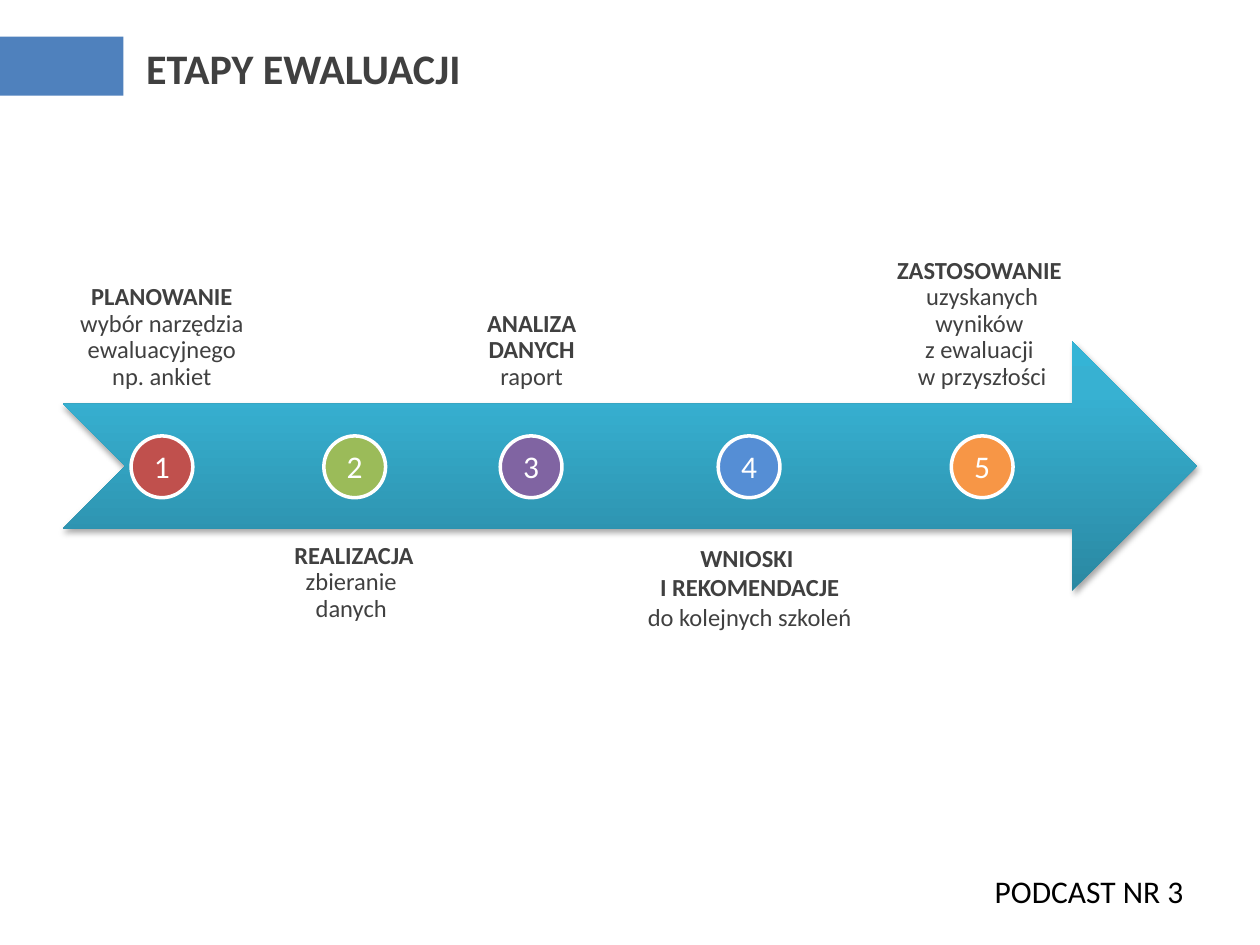
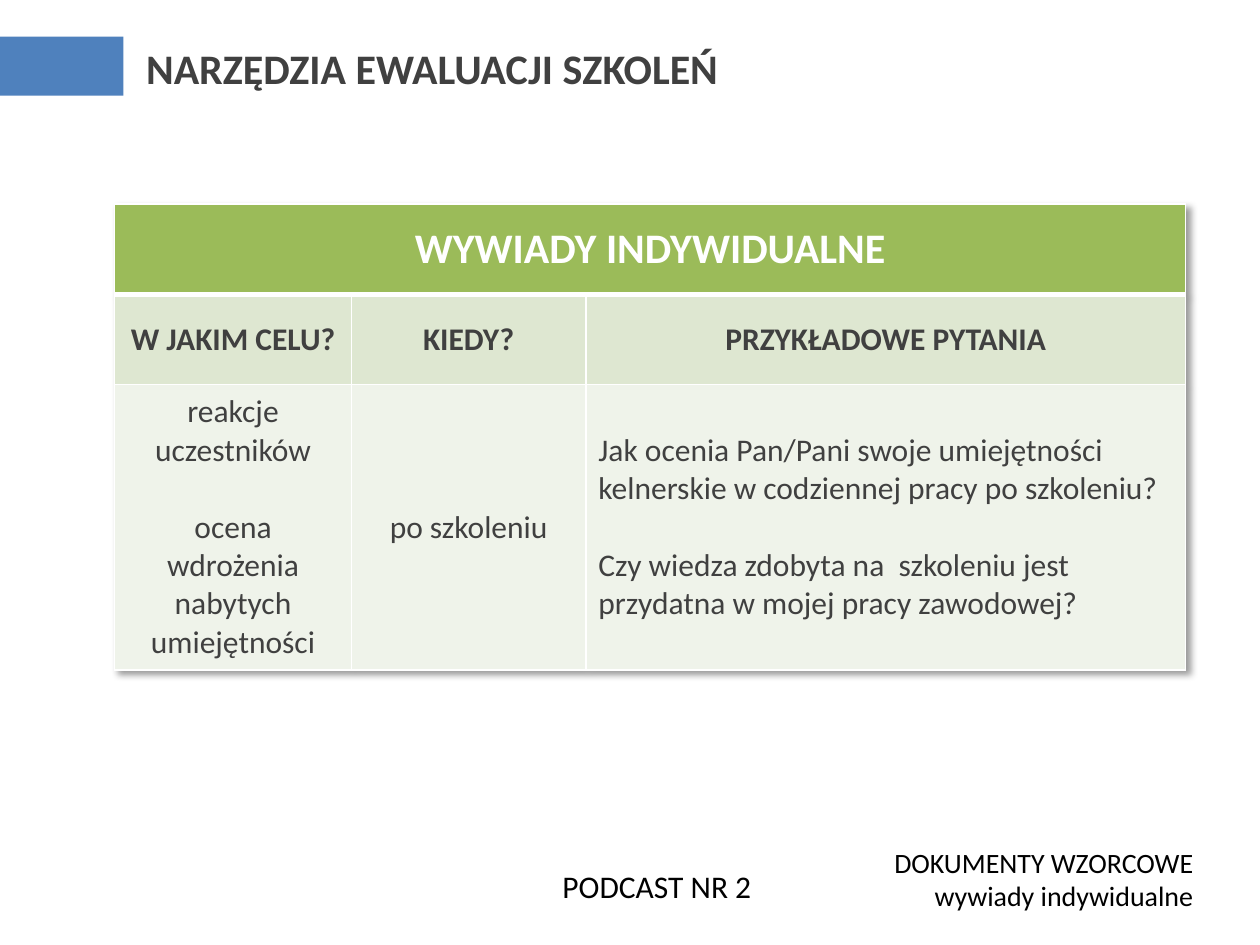
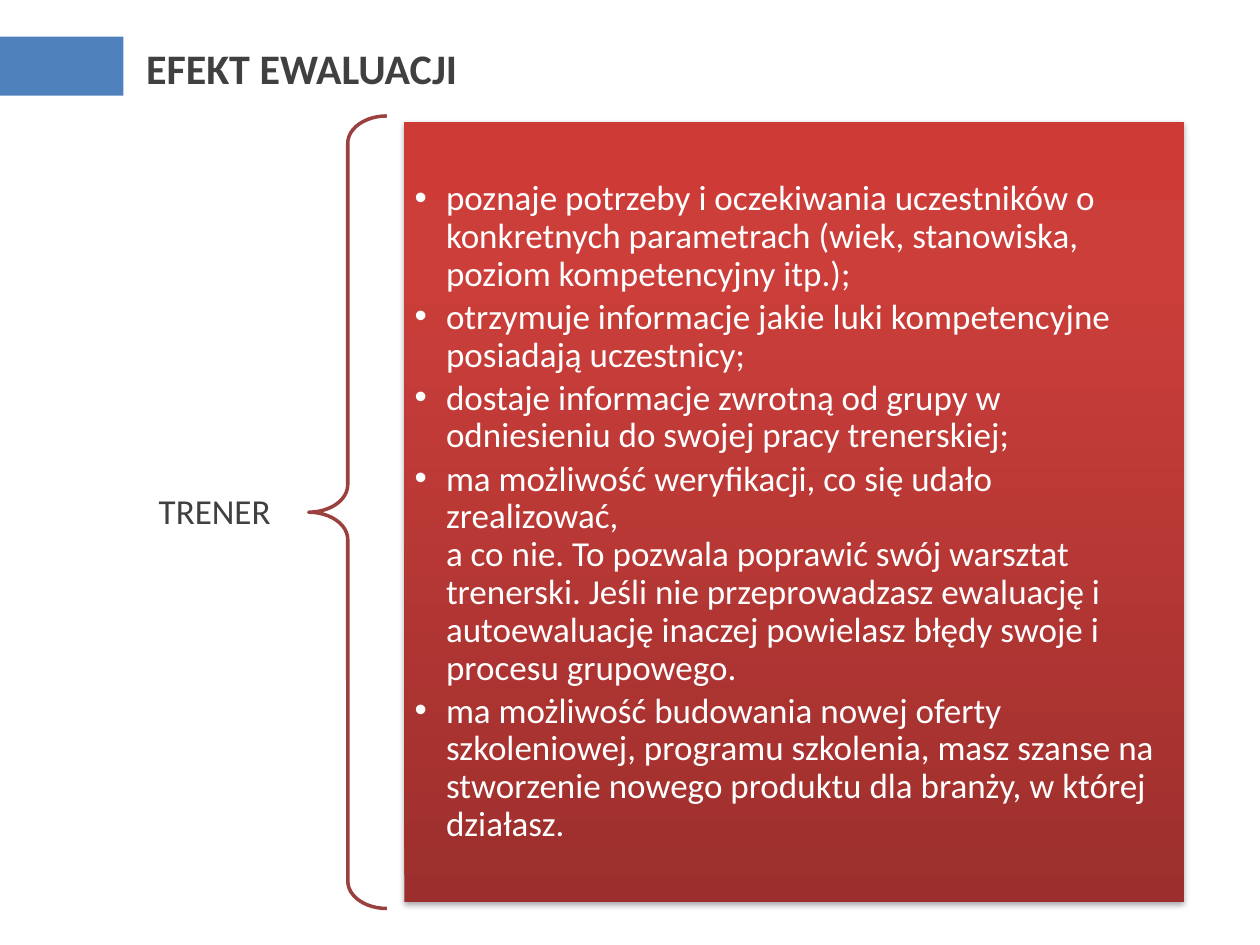
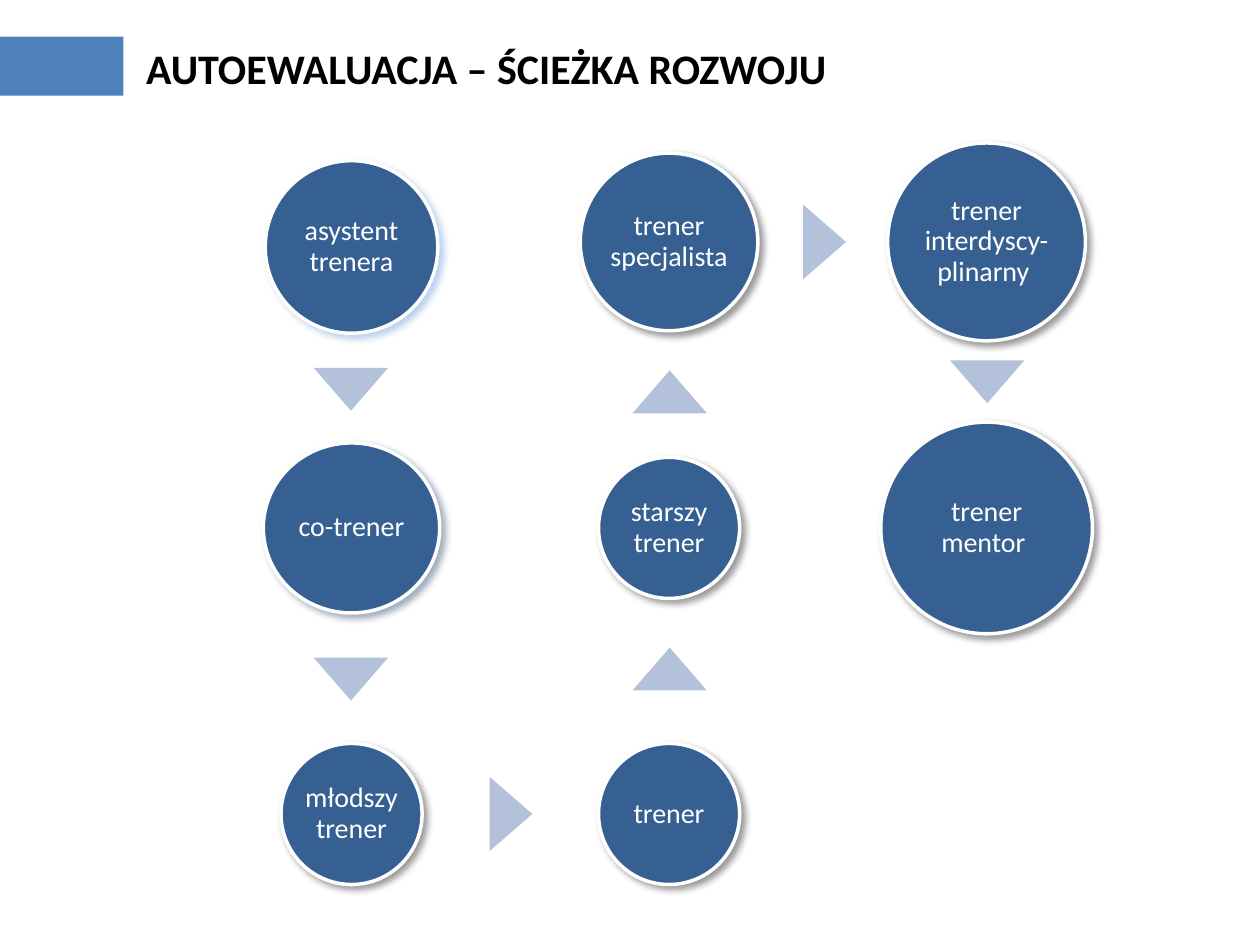
from copy import deepcopy

from lxml.etree import SubElement
from pptx import Presentation
from pptx.dml.color import RGBColor
from pptx.enum.shapes import MSO_SHAPE
from pptx.enum.text import MSO_ANCHOR, MSO_AUTO_SIZE, PP_ALIGN
from pptx.oxml import parse_xml
from pptx.oxml.ns import qn
from pptx.util import Inches, Pt

FONT = "Calibri"
DARK, WHITE, BLACK = "404040", "FFFFFF", "000000"
BLUE, NAVY, PALE_BLUE = "4F81BD", "376092", "B3C1DB"
GREEN, LIGHT_GREEN, PALE_GREEN = "9BBB59", "DEE7D1", "EFF3EA"
TEAL_GRADIENT = [(0, "2A88A2"), (0.8, "37B1D2"), (1, "34B4D6")]
RED_GRADIENT = [(0, "9C2F2D"), (0.8, "CB3E3A"), (1, "CE3B37")]

# Shadow values: colour, opacity in percent, blur and distance in points, angle
SOFT_SHADOW = (BLACK, 35, 3.1, 1.8, 90)
CORNER_SHADOW = (BLACK, 40, 4, 3, 45)
SHADOW_XML = (
    '<a:effectLst xmlns:a="http://schemas.openxmlformats.org/drawingml/2006/main">'
    '<a:outerShdw blurRad="{2:.0f}" dist="{3:.0f}" dir="{4}" algn="tl" rotWithShape="0">'
    '<a:srgbClr val="{0}"><a:alpha val="{1}"/></a:srgbClr></a:outerShdw></a:effectLst>'
)
MARGINS = ("margin_left", "margin_right", "margin_top", "margin_bottom")
FIT = {"word_wrap": False, "auto_size": MSO_AUTO_SIZE.SHAPE_TO_FIT_TEXT}
MIDDLE = {"word_wrap": True, "vertical_anchor": MSO_ANCHOR.MIDDLE}


def add_figure(slide, kind, box, fill=None, line=None, shadow=None):
    """Add a preset shape; fill is a hex colour or a list of gradient stops."""
    figure = slide.shapes.add_shape(kind, *map(Inches, box))
    if fill is None:
        figure.fill.background()
    elif isinstance(fill, str):
        figure.fill.solid()
        figure.fill.fore_color.rgb = RGBColor.from_string(fill)
    else:
        figure.fill.gradient()
        figure.fill.gradient_angle = 90
        stop_list = figure.element.spPr.find(qn("a:gradFill")).find(qn("a:gsLst"))
        stop_list.append(deepcopy(stop_list[-1]))
        for stop, (position, color) in zip(figure.fill.gradient_stops, fill):
            stop.position = position
            stop.color.rgb = RGBColor.from_string(color)
    if line:
        figure.line.color.rgb = RGBColor.from_string(line)
        figure.line.width = Pt(2)
    else:
        figure.line.fill.background()
    figure.shadow.inherit = False
    if shadow:
        color, opacity, blur, distance, angle = shadow
        effects = figure.element.spPr.find(qn("a:effectLst"))
        effects.getparent().replace(effects, parse_xml(SHADOW_XML.format(
            color, opacity * 1000, Pt(blur), Pt(distance), angle * 60000)))
    return figure


def write(frame, paragraphs, size, color=DARK, align=PP_ALIGN.LEFT, spacing=1.0,
          gap=0, inset=None, **frame_format):
    """Fill a text frame; each paragraph is a pair of bold and plain text."""
    if inset is not None:
        frame_format = {**dict.fromkeys(MARGINS, Inches(inset)), **frame_format}
    for name, value in frame_format.items():
        setattr(frame, name, value)
    for index, parts in enumerate(paragraphs):
        paragraph = frame.add_paragraph() if index else frame.paragraphs[0]
        paragraph.alignment = align
        paragraph.line_spacing = spacing
        paragraph.space_before = Pt(gap if index else 0)
        for part, bold in zip(parts, (True, False)):
            for row, text in enumerate(part.split("\n")):
                if row:
                    paragraph.add_line_break()
                if text:
                    run = paragraph.add_run()
                    run.text = text
                    run.font.name = FONT
                    run.font.size = Pt(size)
                    run.font.bold = bold
                    run.font.color.rgb = RGBColor.from_string(color)
        for line_break in paragraph._p.findall(qn("a:br")):
            SubElement(line_break, qn("a:rPr"), sz=str(size * 100))


prs = Presentation()
prs.slide_width, prs.slide_height = Inches(10), Inches(7.5)
TITLE_AND_BODY, TITLE_ONLY = prs.slide_layouts[1], prs.slide_layouts[5]

slides = []
for layout, title, width, color in [
    (TITLE_ONLY, "ETAPY EWALUACJI", 2.72, DARK),
    (TITLE_ONLY, "NARZĘDZIA EWALUACJI SZKOLEŃ", 4.78, DARK),
    (TITLE_AND_BODY, "EFEKT EWALUACJI", 2.7, DARK),
    (TITLE_ONLY, "AUTOEWALUACJA – ŚCIEŻKA ROZWOJU", 5.73, BLACK),
]:
    slide = prs.slides.add_slide(layout)
    heading = slide.shapes.title
    heading.left, heading.top = Inches(1.06), Inches(0.29)
    heading.width, heading.height = Inches(width), Inches(0.5)
    write(heading.text_frame, [(title, "")], 24, color,
          vertical_anchor=MSO_ANCHOR.TOP, **FIT)
    slides.append(slide)
stages_slide, tools_slide, effect_slide, path_slide = slides

# The blue band belongs to the master, so every slide shows it
band = add_figure(stages_slide, MSO_SHAPE.RECTANGLE, (0, 0.29, 0.98, 0.47), BLUE)
prs.slide_master.shapes.element.insert(2, band.element)

# Footers
for slide, box, lines, size, align in [
    (stages_slide, (7.74, 6.87, 1.77, 0.4), [" PODCAST NR 3"], 18, PP_ALIGN.LEFT),
    (tools_slide, (4.31, 6.83, 1.77, 0.4), [" PODCAST NR 2"], 18, PP_ALIGN.LEFT),
    (tools_slide, (6.96, 6.66, 2.61, 0.64),
     ["DOKUMENTY WZORCOWE", "wywiady indywidualne"], 16, PP_ALIGN.RIGHT),
]:
    footer = slide.shapes.add_textbox(*map(Inches, box))
    write(footer.text_frame, [("", line) for line in lines], size, BLACK, align, **FIT)

# Slide 1: five stages on an arrow, labels above and below in turn
add_figure(stages_slide, MSO_SHAPE.NOTCHED_RIGHT_ARROW, (0.5, 2.71, 9, 1.98),
           TEAL_GRADIENT, shadow=SOFT_SHADOW)
stages = [
    (1.04, 0.5, 1.57, "C0504D", 0.9,
     [("PLANOWANIE", " wybór narzędzia ewaluacyjnego np. ankiet")]),
    (2.57, 2.14, 1.34, "9BBB59", 0.9, [("REALIZACJA ", "zbieranie  danych ")]),
    (3.97, 3.55, 1.34, "8064A2", 0.9, [("ANALIZA DANYCH", " raport")]),
    (5.7, 4.96, 1.98, "558ED5", 1.0,
     [("WNIOSKI \nI REKOMENDACJE", ""), ("", "do kolejnych szkoleń")]),
    (7.55, 7, 1.59, "F79646", 0.9,
     [("ZASTOSOWANIE \n", "uzyskanych wyników \nz ewaluacji \nw przyszłości")]),
]
for number, (marker_left, left, width, color, spacing, label) in enumerate(stages, 1):
    above = number % 2 == 1
    caption = stages_slide.shapes.add_textbox(
        Inches(left), Inches(1.23 if above else 4.2), Inches(width), Inches(1.98))
    write(caption.text_frame, label, 14, align=PP_ALIGN.CENTER, spacing=spacing,
          inset=0.11, word_wrap=True,
          vertical_anchor=MSO_ANCHOR.BOTTOM if above else MSO_ANCHOR.TOP)
    marker = add_figure(stages_slide, MSO_SHAPE.OVAL,
                        (marker_left, 3.46, 0.49, 0.49), color, WHITE)
    write(marker.text_frame, [("", str(number))], 18, WHITE, PP_ALIGN.CENTER,
          inset=0, margin_bottom=Inches(0.02), **MIDDLE)

# Slide 2: table of individual interviews
interviews = tools_slide.shapes.add_table(
    3, 3, Inches(0.91), Inches(1.62), Inches(8.5), Inches(3.7)).table
for column, width in zip(interviews.columns, (1.88, 1.86, 4.76)):
    column.width = Inches(width)
for row, height in zip(interviews.rows, (0.72, 0.71, 2.27)):
    row.height = Inches(height)
interviews.cell(0, 0).merge(interviews.cell(0, 2))

rows = [
    (GREEN, WHITE, 24, [[("WYWIADY INDYWIDUALNE", "")], [], []]),
    (LIGHT_GREEN, DARK, 18,
     [[("W JAKIM CELU?", "")], [("KIEDY?", "")], [("PRZYKŁADOWE PYTANIA", "")]]),
    (PALE_GREEN, DARK, 18, [
        [("", "reakcje uczestników"), ("", "ocena wdrożenia nabytych umiejętności")],
        [("", "po szkoleniu")],
        [("", "Jak ocenia Pan/Pani swoje umiejętności kelnerskie "
              "w codziennej pracy po szkoleniu?"),
         ("", "Czy wiedza zdobyta na  szkoleniu jest przydatna "
              "w mojej pracy zawodowej?")],
    ]),
]
for r, (fill, color, size, contents) in enumerate(rows):
    for c, paragraphs in enumerate(contents):
        cell = interviews.cell(r, c)
        cell.fill.solid()
        cell.fill.fore_color.rgb = RGBColor.from_string(fill)
        cell.vertical_anchor = MSO_ANCHOR.MIDDLE
        align = PP_ALIGN.LEFT if (r, c) == (2, 2) else PP_ALIGN.CENTER
        write(cell.text_frame, paragraphs, size, color, align, gap=22)
        properties = cell._tc.get_or_add_tcPr()
        for position, side in enumerate("LRTB"):
            weight = 3 if (r, side) in ((0, "B"), (1, "T")) else 1
            border = SubElement(properties, qn(f"a:ln{side}"), w=str(Pt(weight)))
            SubElement(SubElement(border, qn("a:solidFill")), qn("a:srgbClr"), val=WHITE)
            properties.insert(position, border)
color, opacity, blur, distance, angle = CORNER_SHADOW
interviews._tbl.tblPr.insert(0, parse_xml(SHADOW_XML.format(
    color, opacity * 1000, Pt(blur), Pt(distance), angle * 60000)))

# Slide 3: what the trainer gains
trainer = effect_slide.shapes.add_textbox(*map(Inches, (1.1, 3.86, 1.38, 0.42)))
write(trainer.text_frame, [("", "TRENER")], 20, spacing=0.9,
      inset=0.06, margin_left=Inches(0.16), margin_right=Inches(0.16), **MIDDLE)
brace = add_figure(effect_slide, MSO_SHAPE.LEFT_BRACE, (2.45, 0.92, 0.62, 6.29),
                   line="9A403E")
brace.adjustments[0], brace.adjustments[1] = 0.35, 0.5
panel = add_figure(effect_slide, MSO_SHAPE.RECTANGLE, (3.21, 0.97, 6.19, 6.19),
                   RED_GRADIENT, shadow=SOFT_SHADOW)

gains = [
    "poznaje potrzeby i oczekiwania uczestników o konkretnych parametrach "
    "(wiek, stanowiska, poziom kompetencyjny itp.);",
    "otrzymuje informacje jakie luki kompetencyjne posiadają uczestnicy;",
    "dostaje informacje zwrotną od grupy w odniesieniu do swojej pracy trenerskiej;",
    "ma możliwość weryfikacji, co się udało  zrealizować, \n"
    "a co nie. To pozwala poprawić swój warsztat trenerski. Jeśli nie przeprowadzasz "
    "ewaluację i autoewaluację inaczej powielasz błędy swoje i procesu grupowego.",
    "ma możliwość budowania nowej oferty szkoleniowej, programu szkolenia, masz szanse "
    "na stworzenie nowego produktu dla branży, w której działasz.",
]
gain_list = effect_slide.placeholders[1]
for side in ("left", "top", "width", "height"):
    setattr(gain_list, side, getattr(panel, side))
write(gain_list.text_frame, [("", gain) for gain in gains], 20, WHITE, spacing=0.9,
      gap=3, inset=0.08, margin_right=Inches(0.15),
      auto_size=MSO_AUTO_SIZE.NONE, **MIDDLE)
for paragraph in gain_list.text_frame.paragraphs:
    properties = paragraph._p.get_or_add_pPr()
    properties.set("marL", str(Inches(0.25)))
    properties.set("indent", str(Inches(-0.25)))
    SubElement(properties, qn("a:buChar"), char="•")
effect_slide.shapes.element.append(gain_list.element)  # in front of the panel

# Slide 4: development path, down, up and down again over three columns
FIRST_COLUMN, COLUMN_STEP = 2.79, 2.52
roles = [
    (0, 1.96, 1.37, 1.37, "558ED5", "asystent trenera"),
    (0, 4.19, 1.4, 1.35, "17375E", "co-trener"),
    (0, 6.46, 1.12, 1.12, BLACK, "młodszy trener"),
    (1, 6.46, 1.12, 1.12, BLACK, "trener"),
    (1, 4.19, 1.12, 1.12, BLACK, "starszy trener"),
    (1, 1.92, 1.41, 1.41, BLACK, "trener specjalista "),
    (2, 1.92, 1.57, 1.57, BLACK, "trener interdyscy-plinarny "),
    (2, 4.19, 1.68, 1.68, BLACK, "trener mentor "),
]
for column, middle, width, height, shadow_color, role in roles:
    center = FIRST_COLUMN + column * COLUMN_STEP
    circle = add_figure(path_slide, MSO_SHAPE.OVAL,
                        (center - width / 2, middle - height / 2, width, height),
                        NAVY, WHITE, (shadow_color, *CORNER_SHADOW[1:]))
    write(circle.text_frame, [("", role)], 16, WHITE, PP_ALIGN.CENTER, 0.9,
          inset=0.02, **MIDDLE)

for left, top, rotation in [
    (2.49, 2.92, 180), (2.49, 5.22, 180), (3.76, 6.29, 90), (5.02, 5.14, 0),
    (5.02, 2.94, 0), (6.25, 1.75, 90), (7.54, 2.86, 180),
]:
    pointer = add_figure(path_slide, MSO_SHAPE.ISOSCELES_TRIANGLE,
                         (left, top, 0.59, 0.34), PALE_BLUE)
    pointer.rotation = rotation

prs.save("out.pptx")
